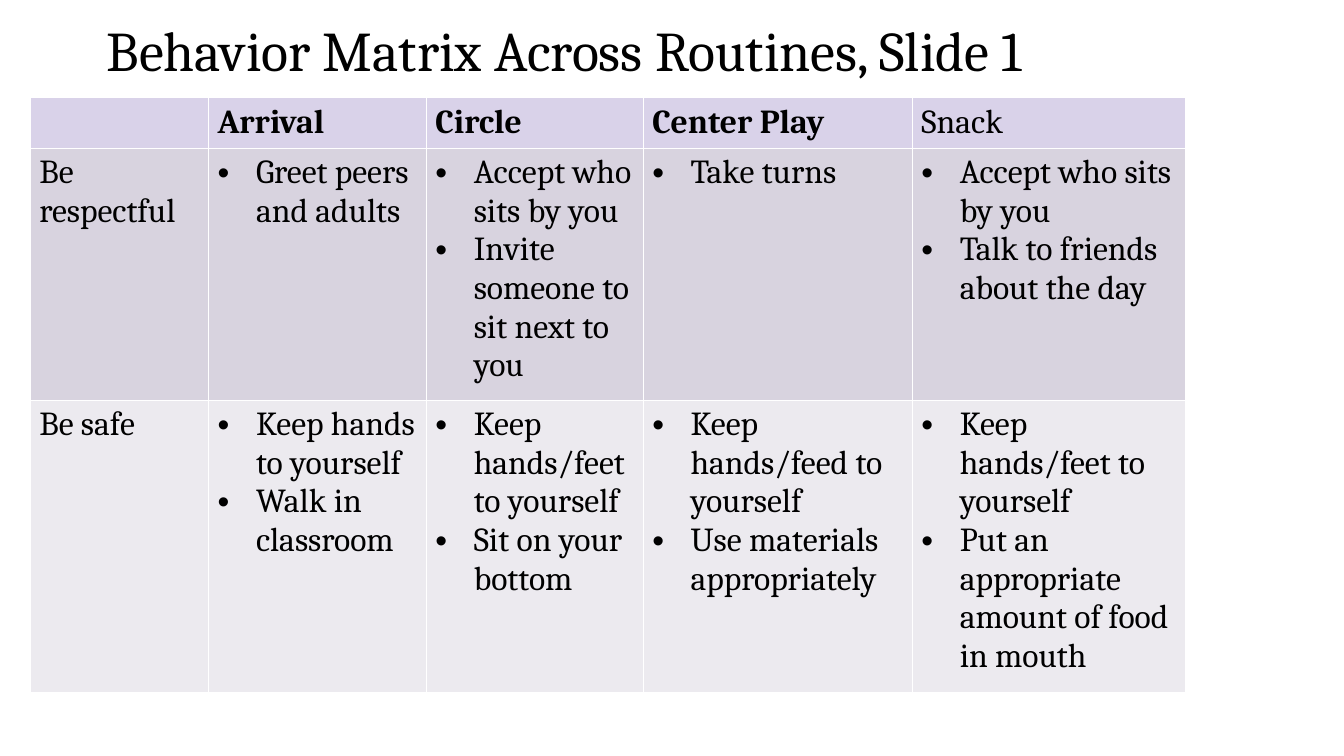
import pptx
import pptx.dml.color
import pptx.enum.text
import pptx.util
from lxml import etree
from pptx.oxml.ns import qn

Inches = pptx.util.Inches
Pt = pptx.util.Pt
RGBColor = pptx.dml.color.RGBColor

BLACK = RGBColor(0x00, 0x00, 0x00)
HEADER_FILL = RGBColor(0xD9, 0xD2, 0xE9)
RESPECTFUL_FILL = RGBColor(0xD8, 0xD3, 0xDF)
SAFE_FILL = RGBColor(0xEC, 0xEA, 0xEF)
FONT_NAME = "Cambria"

ROUTINES = ["", "Arrival", "Circle", "Center Play", "Snack"]
RESPECTFUL = [
    "Be respectful",
    ["Greet peers and adults"],
    ["Accept who sits by you", "Invite someone to sit next to you"],
    ["Take turns"],
    ["Accept who sits by you", "Talk to friends about the day"],
]
SAFE = [
    "Be safe",
    ["Keep hands to yourself", "Walk in classroom"],
    ["Keep hands/feet to yourself", "Sit on your bottom"],
    ["Keep hands/feed to yourself", "Use materials appropriately"],
    ["Keep hands/feet to yourself", "Put an appropriate amount of food in mouth"],
]
ROWS = [
    (0.48, HEADER_FILL, ROUTINES),
    (2.4, RESPECTFUL_FILL, RESPECTFUL),
    (2.78, SAFE_FILL, SAFE),
]
COLUMN_WIDTHS = [1.77, 2.16, 2.15, 2.67, 2.71]


def add_bullet(para):
    properties = para._p.get_or_add_pPr()
    properties.set("marL", str(Inches(0.38)))
    properties.set("indent", str(-Inches(0.38)))
    etree.SubElement(properties, qn("a:buFont")).set("typeface", "Arial")
    etree.SubElement(properties, qn("a:buChar")).set("char", "•")


def style_font(para, size, bold=False):
    para.font.name = FONT_NAME
    para.font.size = Pt(size)
    para.font.bold = bold
    para.font.color.rgb = BLACK


deck = pptx.Presentation()
deck.slide_width = Inches(13.33)
deck.slide_height = Inches(7.5)
slide = deck.slides.add_slide(deck.slide_layouts[6])

title_box = slide.shapes.add_textbox(Inches(0.96), Inches(0), Inches(11.5), Inches(1.06))
title_frame = title_box.text_frame
title_frame.word_wrap = True
title_frame.vertical_anchor = pptx.enum.text.MSO_ANCHOR.MIDDLE
title = title_frame.paragraphs[0]
title.text = "Behavior Matrix Across Routines, Slide 1"
title.line_spacing = 0.9
style_font(title, 40)

matrix = slide.shapes.add_table(
    len(ROWS), len(COLUMN_WIDTHS), Inches(0.3), Inches(0.97),
    Inches(sum(COLUMN_WIDTHS)), Inches(sum(row[0] for row in ROWS)),
).table
for column, width in zip(matrix.columns, COLUMN_WIDTHS):
    column.width = Inches(width)

for row_index, (height, fill, entries) in enumerate(ROWS):
    matrix.rows[row_index].height = Inches(height)
    for column_index, entry in enumerate(entries):
        cell = matrix.cell(row_index, column_index)
        cell.margin_left = cell.margin_right = Inches(0.09)
        cell.margin_top = cell.margin_bottom = Inches(0.05)
        cell.fill.solid()
        cell.fill.fore_color.rgb = fill
        bulleted = isinstance(entry, list)
        cell.text = "\n".join(entry) if bulleted else entry
        for para in cell.text_frame.paragraphs:
            if bulleted:
                add_bullet(para)
            style_font(para, 24, bold=row_index == 0 and entry != "Snack")

deck.save("out.pptx")
